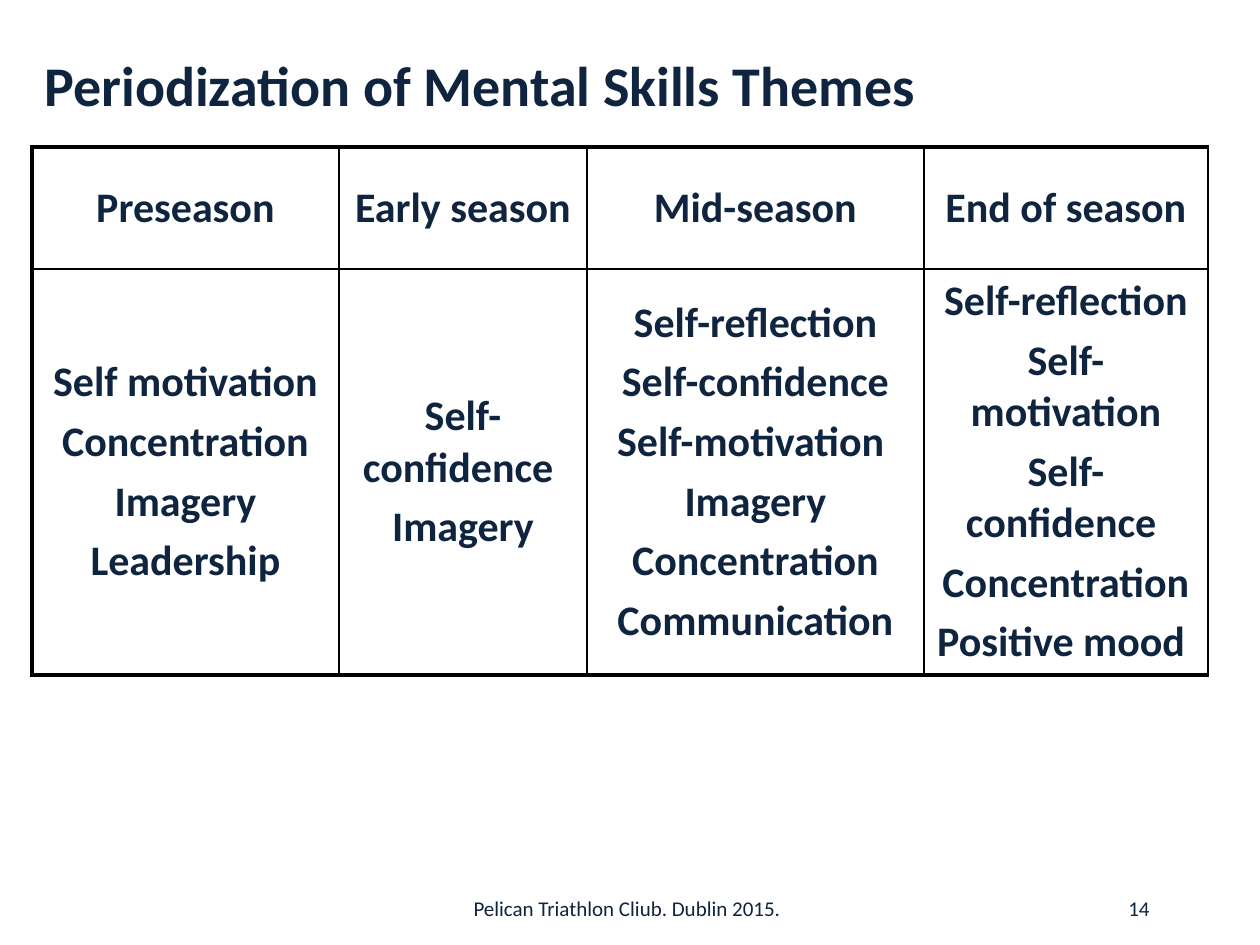
from lxml.etree import SubElement
from pptx import Presentation
from pptx.dml.color import RGBColor
from pptx.enum.text import MSO_ANCHOR as Anchor, PP_ALIGN as Align
from pptx.oxml.ns import qn
from pptx.util import Pt

PX = 914400 // 126
COLORS = {"text": "0F243E", "border": "000000", "paper": "FFFFFF"}
FONT = "Calibri"

TEXTS = [
    ("Periodization of Mental Skills Themes", (32, 21, 1081, 126), 32, True, Align.LEFT),
    ("Pelican Triathlon Cliub. Dublin 2015.", (427, 877, 400, 63), 12, False, Align.CENTER),
    ("14", (900, 877, 262, 63), 12, False, Align.RIGHT),
]
SEASONS = [
    ("Preseason", 307, ["Self motivation", "Concentration", "Imagery", "Leadership"]),
    ("Early season", 248, ["Self-confidence ", "Imagery"]),
    ("Mid-season", 337, ["Self-reflection", "Self-confidence", "Self-motivation ",
                         "Imagery", "Concentration", "Communication"]),
    ("End of season", 284, ["Self-reflection", "Self-motivation", "Self-confidence ",
                            "Concentration", "Positive mood "]),
]
TABLE_LEFT, TABLE_TOP = 32, 147
ROW_HEIGHTS = [122, 406]
THIN, THICK = 1, 2.25


def write_lines(frame, lines, size, bold, align):
    for index, line in enumerate(lines):
        paragraph = frame.add_paragraph() if index else frame.paragraphs[0]
        paragraph.alignment = align
        if index:
            paragraph.space_before = Pt(size * 0.2)
        run = paragraph.add_run()
        run.text = line
        run.font.name = FONT
        run.font.size = Pt(size)
        run.font.bold = bold
        run.font.color.rgb = RGBColor.from_string(COLORS["text"])


def add_text(slide, text, box, size, bold, align):
    shape = slide.shapes.add_textbox(*(value * PX for value in box))
    frame = shape.text_frame
    frame.word_wrap = True
    frame.vertical_anchor = Anchor.MIDDLE
    write_lines(frame, [text], size, bold, align)


def set_borders(cell, widths):
    properties = cell._tc.get_or_add_tcPr()
    for index, (side, width) in enumerate(widths.items()):
        line = properties.makeelement(qn(f"a:ln{side}"), {"w": str(Pt(width))})
        fill = SubElement(line, qn("a:solidFill"))
        SubElement(fill, qn("a:srgbClr"), val=COLORS["border"])
        properties.insert(index, line)


def add_season_table(slide):
    widths = [width for _, width, _ in SEASONS]
    box = (TABLE_LEFT, TABLE_TOP, sum(widths), sum(ROW_HEIGHTS))
    table = slide.shapes.add_table(
        len(ROW_HEIGHTS), len(SEASONS), *(value * PX for value in box)).table
    table.first_row = table.horz_banding = False
    for row, height in zip(table.rows, ROW_HEIGHTS):
        row.height = height * PX
    for column, (season, width, themes) in enumerate(SEASONS):
        table.columns[column].width = width * PX
        for row, lines in enumerate([[season], themes]):
            cell = table.cell(row, column)
            cell.vertical_anchor = Anchor.MIDDLE
            cell.fill.solid()
            cell.fill.fore_color.rgb = RGBColor.from_string(COLORS["paper"])
            write_lines(cell.text_frame, lines, 24, True, Align.CENTER)
            set_borders(cell, {
                "L": THICK if column == 0 else THIN,
                "R": THIN,
                "T": THICK if row == 0 else THIN,
                "B": THICK if row == len(ROW_HEIGHTS) - 1 else THIN,
            })


def main():
    presentation = Presentation()
    presentation.slide_width = 1260 * PX
    presentation.slide_height = 945 * PX
    slide = presentation.slides.add_slide(presentation.slide_layouts[6])
    for text in TEXTS:
        add_text(slide, *text)
    add_season_table(slide)
    presentation.save("out.pptx")


if __name__ == "__main__":
    main()
